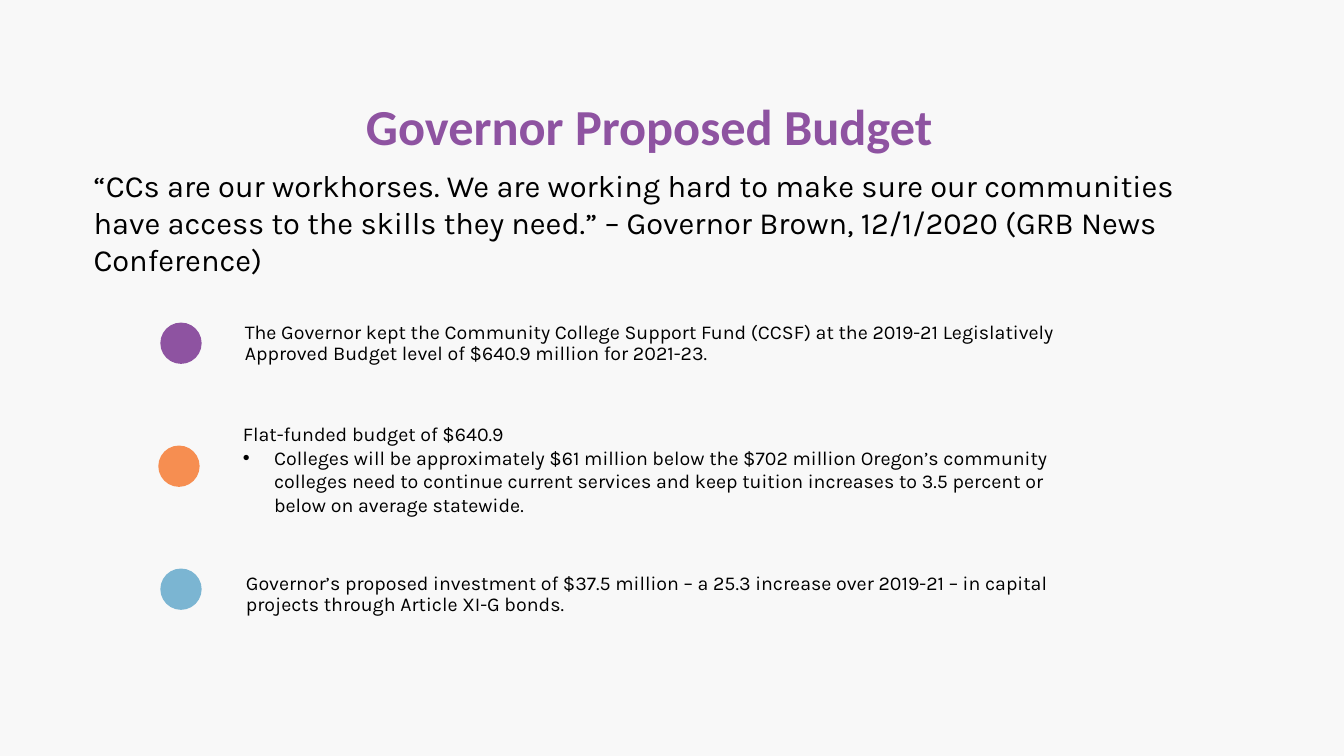
"""Build the slide on the Governor's proposed budget."""
from dataclasses import dataclass

from lxml.etree import SubElement
from pptx import Presentation
from pptx.dml.color import RGBColor
from pptx.enum.shapes import MSO_SHAPE
from pptx.enum.text import MSO_ANCHOR, PP_ALIGN
from pptx.oxml.ns import qn
from pptx.slide import Slide
from pptx.text.text import TextFrame, _Paragraph
from pptx.util import Inches, Pt

PURPLE = "8E53A1"
BLACK = "000000"
DOT = 0.41


@dataclass
class Para:
    text: str
    bullet: bool = False
    tight: bool = False


@dataclass
class Item:
    color: str
    dot: tuple[float, float]
    box: tuple[float, float, float, float]
    paras: list[Para]


ITEMS = [
    Item(PURPLE, (1.59, 3.2), (2.33, 3.15, 8.89, 0.53), [
        Para("The Governor kept the Community College Support Fund (CCSF) at the "
             "2019-21 Legislatively Approved Budget level of $640.9 million for "
             "2021-23.", tight=True)]),
    Item("F68E51", (1.57, 4.42), (2.31, 4.14, 8.58, 1.04), [
        Para("Flat-funded budget of $640.9"),
        Para("Colleges will be approximately $61 million below the $702 million "
             "Oregon’s community colleges need to continue current services and "
             "keep tuition increases to 3.5 percent or below on average "
             "statewide.", bullet=True)]),
    Item("7BB5D2", (1.59, 5.64), (2.34, 5.64, 8.58, 0.79), [
        Para("Governor’s proposed investment of $37.5 million – a 25.3 increase "
             "over 2019-21 – in capital projects through Article XI-G bonds.",
             tight=True)]),
]


def rgb(color: str) -> RGBColor:
    """Turn a hex string into a color."""
    return RGBColor.from_string(color)


def add_box(slide: Slide, box: tuple[float, float, float, float]) -> TextFrame:
    """Add a wrapping text box and return its frame."""
    frame = slide.shapes.add_textbox(*map(Inches, box)).text_frame
    frame.word_wrap = True
    return frame


def add_run(para: _Paragraph, text: str, size: float, font: str = "Karla",
            color: str = BLACK, bold: bool = False) -> None:
    """Add one styled run to a paragraph."""
    run = para.add_run()
    run.text = text
    run.font.size = Pt(size)
    run.font.name = font
    run.font.bold = bold
    run.font.color.rgb = rgb(color)


def add_bullet(para: _Paragraph) -> None:
    """Give a paragraph a hanging bullet."""
    props = para._p.get_or_add_pPr()
    props.set("marL", str(Inches(0.31)))
    props.set("indent", str(Inches(-0.31)))
    SubElement(props, qn("a:buFont"), typeface="Arial")
    SubElement(props, qn("a:buChar"), char="•")


def add_item(slide: Slide, item: Item) -> None:
    """Draw a colored dot with its text."""
    dot = slide.shapes.add_shape(
        MSO_SHAPE.OVAL, *map(Inches, (*item.dot, DOT, DOT)))
    dot.shadow.inherit = False
    dot.fill.solid()
    dot.fill.fore_color.rgb = rgb(item.color)
    dot.line.fill.background()

    frame = add_box(slide, item.box)
    for index, part in enumerate(item.paras):
        para = frame.add_paragraph() if index else frame.paragraphs[0]
        if part.tight:
            para.line_spacing = 0.9
            para.space_before = Pt(4)
        if part.bullet:
            add_bullet(para)
        add_run(para, part.text, 14)


def main() -> None:
    """Build and save the slide."""
    deck = Presentation()
    deck.slide_width, deck.slide_height = Inches(13.33), Inches(7.5)
    slide = deck.slides.add_slide(deck.slide_layouts[6])
    slide.background.fill.solid()
    slide.background.fill.fore_color.rgb = rgb("F8F8F8")

    title = add_box(slide, (0.44, 0.85, 12, 0.78))
    title.margin_left = title.margin_right = 0
    title.margin_top = title.margin_bottom = 0
    title.vertical_anchor = MSO_ANCHOR.MIDDLE
    title.paragraphs[0].alignment = PP_ALIGN.CENTER
    add_run(title.paragraphs[0], "Governor Proposed Budget", 36,
            "Calibri", PURPLE, True)

    quote = add_box(slide, (0.83, 1.6, 11.55, 1.21))
    quote.vertical_anchor = MSO_ANCHOR.MIDDLE
    add_run(quote.paragraphs[0],
            "“CCs are our workhorses. We are working hard to make sure our "
            "communities have access to the skills they need.” – Governor "
            "Brown, 12/1/2020 (GRB News Conference)", 22)

    for item in ITEMS:
        add_item(slide, item)
    deck.save("out.pptx")


if __name__ == "__main__":
    main()
